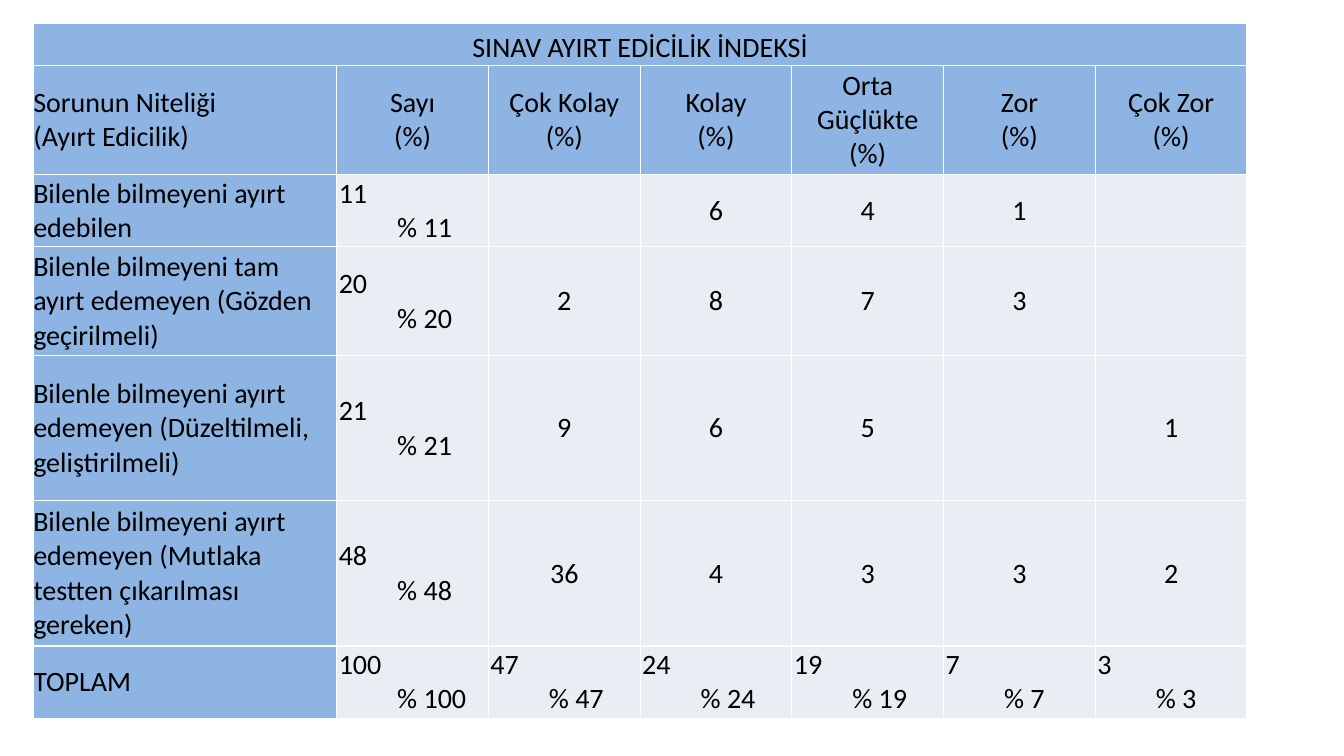
from lxml.etree import SubElement
from pptx import Presentation
from pptx.dml.color import RGBColor
from pptx.enum.text import MSO_ANCHOR, PP_ALIGN
from pptx.oxml.ns import qn
from pptx.util import Inches, Pt

COLORS = {"heading": "8EB4E3", "value": "E9EDF4", "text": "000000", "border": "FFFFFF"}
FONT = "Calibri"
FONT_SIZE = 20
COLUMN_UNIT = 1.505
ROW_UNIT = 0.36
TITLE_HEIGHT = 0.42
COLUMN_SPANS = [2, 1, 1, 1, 1, 1, 1]
ROW_SPANS = [3, 2, 3, 4, 4, 2]
PERCENT_INDENT = 0.6

TITLE = "SINAV AYIRT EDİCİLİK İNDEKSİ"
HEADINGS = [
    "Sorunun Niteliği\n(Ayırt Edicilik)",
    "Sayı\n(%)",
    "Çok Kolay\n(%)",
    "Kolay\n(%)",
    "Orta Güçlükte\n(%)",
    "Zor\n(%)",
    "Çok Zor\n(%)",
]
QUESTION_GROUPS = [
    ("Bilenle bilmeyeni ayırt\nedebilen", 11, ["", 6, 4, 1, ""]),
    ("Bilenle bilmeyeni tam ayırt edemeyen (Gözden geçirilmeli)", 20, [2, 8, 7, 3, ""]),
    ("Bilenle bilmeyeni ayırt edemeyen (Düzeltilmeli, geliştirilmeli)", 21, [9, 6, 5, "", 1]),
    ("Bilenle bilmeyeni ayırt edemeyen (Mutlaka testten çıkarılması gereken)", 48, [36, 4, 3, 3, 2]),
]
TOTALS = [100, 47, 24, 19, 7, 3]


def add_borders(cell):
    properties = cell._tc.get_or_add_tcPr()
    for side in ("a:lnL", "a:lnR", "a:lnT", "a:lnB"):
        border = SubElement(properties, qn(side), w=str(Pt(1)))
        border_fill = SubElement(border, qn("a:solidFill"))
        SubElement(border_fill, qn("a:srgbClr"), val=COLORS["border"])


def format_cell(cell, color, anchor=MSO_ANCHOR.MIDDLE):
    cell.margin_left = cell.margin_right = cell.margin_top = cell.margin_bottom = 0
    cell.vertical_anchor = anchor
    add_borders(cell)
    cell.fill.solid()
    cell.fill.fore_color.rgb = RGBColor.from_string(COLORS[color])


def write_line(paragraph, content, alignment=PP_ALIGN.CENTER, indent=0):
    paragraph.text = str(content)
    paragraph.alignment = alignment
    paragraph.font.name = FONT
    paragraph.font.size = Pt(FONT_SIZE)
    paragraph.font.color.rgb = RGBColor.from_string(COLORS["text"])
    if indent:
        paragraph._p.get_or_add_pPr().set("marL", str(Inches(indent)))


def fill_heading(cell, heading, alignment=PP_ALIGN.CENTER, anchor=MSO_ANCHOR.MIDDLE):
    format_cell(cell, "heading", anchor)
    write_line(cell.text_frame.paragraphs[0], heading, alignment)


def fill_value(cell, value):
    format_cell(cell, "value")
    write_line(cell.text_frame.paragraphs[0], value)


def fill_count_with_percent(cell, count):
    format_cell(cell, "value")
    write_line(cell.text_frame.paragraphs[0], count, PP_ALIGN.LEFT, 0.02)
    write_line(cell.text_frame.add_paragraph(), f"% {count}", PP_ALIGN.LEFT, PERCENT_INDENT)


def add_index_table(slide):
    row_heights = [TITLE_HEIGHT] + [span * ROW_UNIT for span in ROW_SPANS]
    column_widths = [span * COLUMN_UNIT for span in COLUMN_SPANS]
    index_table = slide.shapes.add_table(
        len(row_heights), len(column_widths), Inches(0.33), Inches(0.23),
        Inches(sum(column_widths)), Inches(sum(row_heights)),
    ).table
    index_table.first_row = False
    index_table.horz_banding = False
    for row, height in zip(index_table.rows, row_heights):
        row.height = Inches(height)
    for column, width in zip(index_table.columns, column_widths):
        column.width = Inches(width)
    return index_table


def fill_title_row(index_table):
    last_column = len(COLUMN_SPANS) - 1
    index_table.cell(0, 0).merge(index_table.cell(0, last_column))
    fill_heading(index_table.cell(0, 0), TITLE, anchor=MSO_ANCHOR.BOTTOM)


def fill_heading_row(index_table):
    for column, heading in enumerate(HEADINGS):
        alignment = PP_ALIGN.CENTER if column else PP_ALIGN.LEFT
        fill_heading(index_table.cell(1, column), heading, alignment)


def fill_question_rows(index_table):
    for row, (quality, count, difficulties) in enumerate(QUESTION_GROUPS, start=2):
        fill_heading(index_table.cell(row, 0), quality, PP_ALIGN.LEFT)
        fill_count_with_percent(index_table.cell(row, 1), count)
        for column, value in enumerate(difficulties, start=2):
            fill_value(index_table.cell(row, column), value)


def fill_total_row(index_table):
    total_row = len(ROW_SPANS)
    fill_heading(index_table.cell(total_row, 0), "TOPLAM", PP_ALIGN.LEFT)
    for column, total in enumerate(TOTALS, start=1):
        fill_count_with_percent(index_table.cell(total_row, column), total)


def main():
    presentation = Presentation()
    presentation.slide_width = Inches(13.33)
    presentation.slide_height = Inches(7.5)
    slide = presentation.slides.add_slide(presentation.slide_layouts[6])
    index_table = add_index_table(slide)
    fill_title_row(index_table)
    fill_heading_row(index_table)
    fill_question_rows(index_table)
    fill_total_row(index_table)
    presentation.save("out.pptx")


if __name__ == "__main__":
    main()
